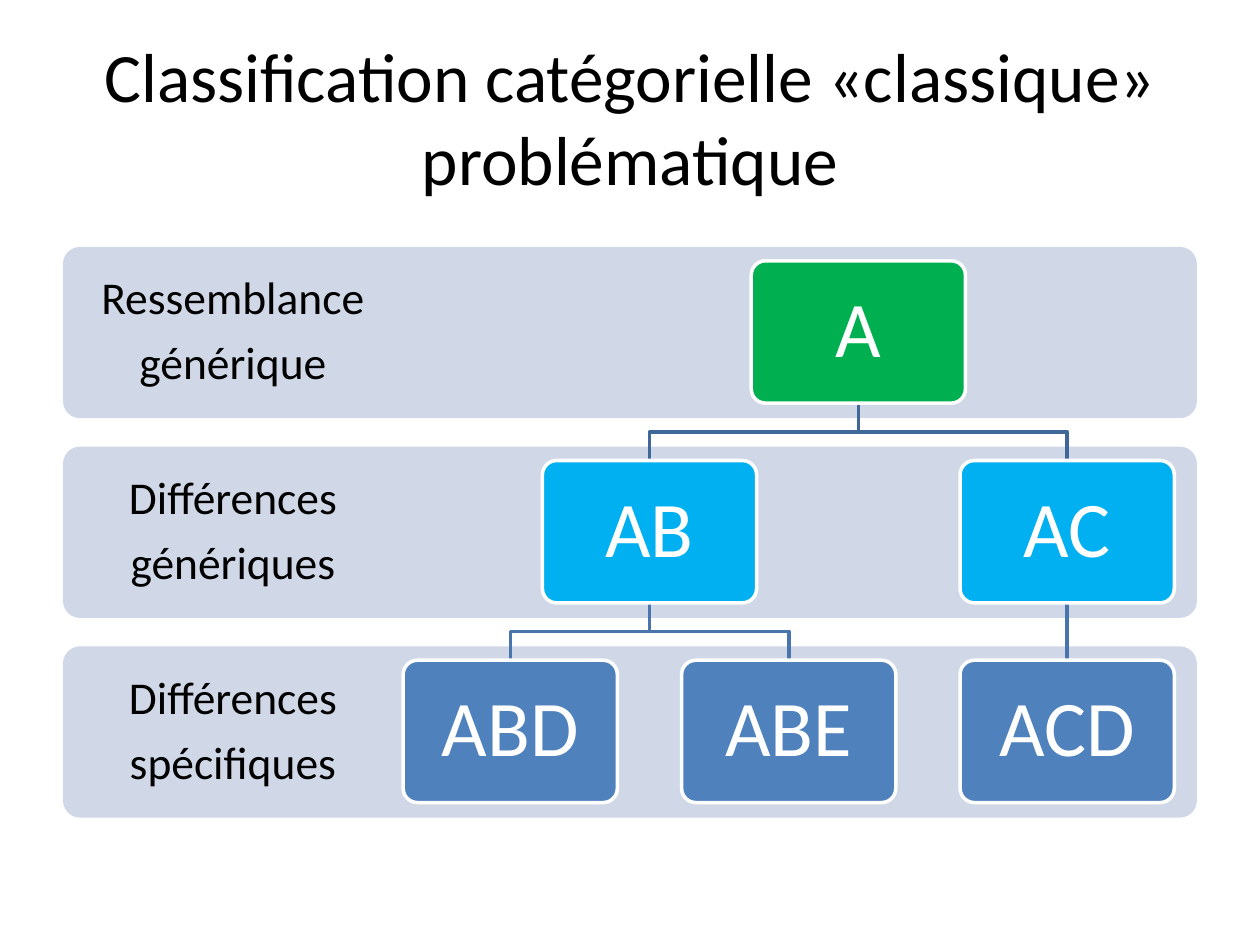
from pptx import Presentation
from pptx.dml.color import RGBColor
from pptx.enum import shapes, text
from pptx.util import Inches, Pt

TITLE = "Classification catégorielle «classique» problématique"
LEVELS = [
    (["Ressemblance", "générique"], "00B050", "3F6797"),
    (["Différences", "génériques"], "00B0F0", "4875AC"),
    (["Différences", "spécifiques"], "4F81BD", None),
]
NODES = {
    "A": (0, 1.25),
    "AB": (1, 0.5),
    "AC": (1, 2),
    "ABD": (2, 0),
    "ABE": (2, 1),
    "ACD": (2, 2),
}
LINKS = [("A", "AB"), ("A", "AC"), ("AB", "ABD"), ("AB", "ABE"), ("AC", "ACD")]

LEFT, BAND_TOP, BAND_W, BAND_H, LABEL_W = 0.5, 1.96, 9, 1.36, 2.7
NODE_TOP, NODE_W, NODE_H = 2.07, 1.7, 1.13
FIRST_CENTRE, COLUMN_STEP, LEVEL_STEP = 4.05, 2.21, 1.585


def rgb(value):
    return RGBColor.from_string(value)


def write(shape, lines, size, color="000000", inset=0.1, spacing=None, after=0):
    frame = shape.text_frame
    frame.word_wrap = True
    frame.vertical_anchor = text.MSO_ANCHOR.MIDDLE
    frame.margin_left = frame.margin_right = Inches(inset)
    frame.margin_top = frame.margin_bottom = Inches(inset)
    for index, line in enumerate(lines):
        paragraph = frame.paragraphs[0] if index == 0 else frame.add_paragraph()
        paragraph.alignment = text.PP_ALIGN.CENTER
        paragraph.line_spacing = spacing
        paragraph.space_after = Pt(after)
        run = paragraph.add_run()
        run.text = line
        run.font.name = "Calibri"
        run.font.size = Pt(size)
        run.font.color.rgb = rgb(color)


def rounded_box(x, y, w, h, fill, border=None):
    box = slide.shapes.add_shape(
        shapes.MSO_SHAPE.ROUNDED_RECTANGLE, Inches(x), Inches(y), Inches(w), Inches(h))
    box.adjustments[0] = 0.1
    box.shadow.inherit = False
    box.fill.solid()
    box.fill.fore_color.rgb = rgb(fill)
    if border:
        box.line.color.rgb = rgb(border)
        box.line.width = Pt(2)
    else:
        box.line.fill.background()
    return box


def node_position(name):
    level, column = NODES[name]
    return FIRST_CENTRE + column * COLUMN_STEP, NODE_TOP + level * LEVEL_STEP


def link(parent, child):
    x1, parent_top = node_position(parent)
    x2, y2 = node_position(child)
    y1 = parent_top + NODE_H
    middle = (y1 + y2) / 2
    if x1 == x2:
        branch = slide.shapes.add_connector(
            shapes.MSO_CONNECTOR.STRAIGHT, Inches(x1), Inches(y1), Inches(x2), Inches(y2))
        branch._element.spPr.get_or_add_effectLst() if hasattr(
            branch._element.spPr, "get_or_add_effectLst") else None
    else:
        builder = slide.shapes.build_freeform(Inches(x1), Inches(y1))
        corners = [(x1, middle), (x2, middle), (x2, y2)]
        builder.add_line_segments([(Inches(x), Inches(y)) for x, y in corners], close=False)
        branch = builder.convert_to_shape()
        branch.shadow.inherit = False
        branch.fill.background()
    branch.line.color.rgb = rgb(LEVELS[NODES[parent][0]][2])
    branch.line.width = Pt(2)


prs = Presentation()
prs.slide_width, prs.slide_height = Inches(10), Inches(7.5)
slide = prs.slides.add_slide(prs.slide_layouts[5])

title = slide.shapes.title
title.left, title.top, title.width, title.height = map(Inches, (0.5, 0.3, 9, 1.25))
write(title, [TITLE], 39.6)

for level, (label, _, _) in enumerate(LEVELS):
    top = BAND_TOP + level * LEVEL_STEP
    rounded_box(LEFT, top, BAND_W, BAND_H, "D0D8E8")
    caption = slide.shapes.add_textbox(
        Inches(LEFT), Inches(top), Inches(LABEL_W), Inches(BAND_H))
    write(caption, label, 26, inset=0.2, spacing=0.9, after=9)

for parent, child in LINKS:
    link(parent, child)

for name, (level, _) in NODES.items():
    centre, top = node_position(name)
    node = rounded_box(centre - NODE_W / 2, top, NODE_W, NODE_H, LEVELS[level][1], "FFFFFF")
    write(node, [name], 45, "FFFFFF", inset=0.19, spacing=0.9, after=16)

prs.save("out.pptx")
